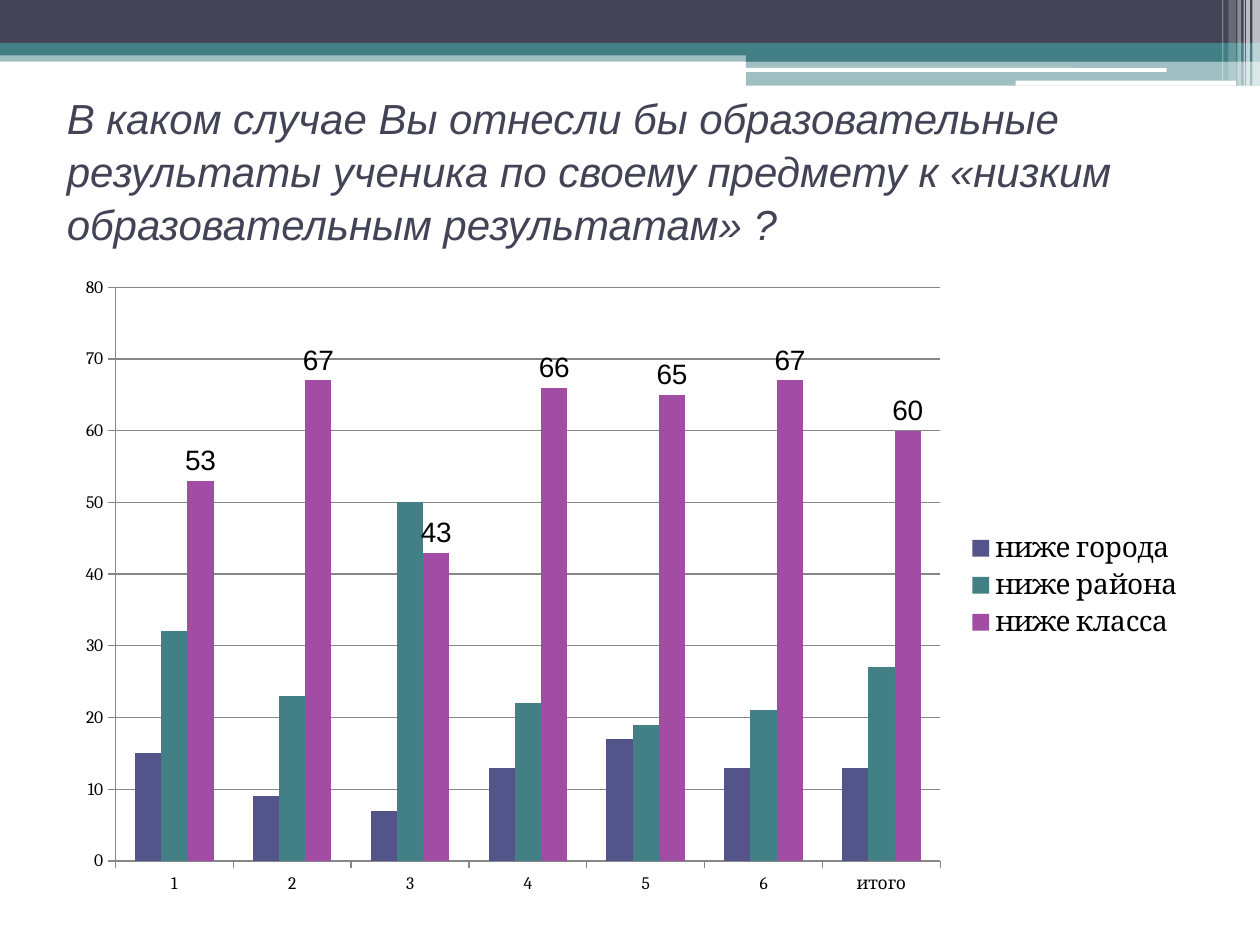
from dataclasses import dataclass

from lxml import etree
from pptx import Presentation
from pptx.chart.data import CategoryChartData
from pptx.dml.color import RGBColor
from pptx.enum.chart import XL_CHART_TYPE, XL_LABEL_POSITION, XL_LEGEND_POSITION, XL_TICK_MARK
from pptx.enum.shapes import MSO_SHAPE
from pptx.enum.text import MSO_ANCHOR, MSO_AUTO_SIZE, PP_ALIGN
from pptx.oxml.ns import qn
from pptx.util import Inches, Pt

RECT = MSO_SHAPE.RECTANGLE
ROUND = MSO_SHAPE.ROUNDED_RECTANGLE
COLUMN = XL_CHART_TYPE.COLUMN_CLUSTERED
RIGHT = XL_LEGEND_POSITION.RIGHT
ABOVE = XL_LABEL_POSITION.OUTSIDE_END
OUT = XL_TICK_MARK.OUTSIDE


@dataclass(frozen=True)
class Theme:
    dark: str = "424456"
    teal: str = "438086"
    white: str = "FFFFFF"
    black: str = "000000"
    grid: str = "878787"
    bars: tuple = ("53548A", "438086", "A04DA3")
    sans: str = "Arial"
    serif: str = "Cambria"
    head: int = 24
    label: int = 16
    axis: int = 10


THEME = Theme()

TITLE = ("В каком случае Вы отнесли бы образовательные результаты ученика "
         "по своему предмету к «низким образовательным результатам» ?")
CATS = ("1", "2", "3", "4", "5", "6", "итого")
SERIES = (
    ("ниже города", (15, 9, 7, 13, 17, 13, 13)),
    ("ниже района", (32, 23, 50, 22, 19, 21, 27)),
    ("ниже класса", (53, 67, 43, 66, 65, 67, 60)),
)
# left, top, width, height, colour, opacity in percent
BANDS = (
    (0, 0.4, 10, 0.09, THEME.teal, 50),
    (0, 0, 10, 0.34, THEME.dark, 100),
    (0, 0.34, 10, 0.1, THEME.teal, 100),
    (5.92, 0.39, 4.08, 0.1, THEME.teal, 100),
    (5.92, 0.48, 4.08, 0.2, THEME.teal, 50),
)
LINES = ((5.91, 0.54, 3.35, 0.03), (8.06, 0.64, 1.75, 0.04))
# left, width, height, opacity in percent
STRIPES = (
    (9.94, 0.06, 0.68, 65),
    (9.89, 0.03, 0.68, 65),
    (9.87, 0.01, 0.68, 60),
    (9.82, 0.03, 0.68, 40),
    (9.75, 0.06, 0.64, 20),
    (9.7, 0.01, 0.64, 30),
)


def rgb(tone):
    return RGBColor.from_string(tone)


def set_font(font, face, size, tone):
    font.name = face
    font.size = Pt(size)
    font.color.rgb = rgb(tone)


def add_bar(slide, box, tone, alpha=100, kind=RECT):
    bar = slide.shapes.add_shape(kind, *map(Inches, box))
    bar.shadow.inherit = False
    bar.line.fill.background()
    bar.fill.solid()
    bar.fill.fore_color.rgb = rgb(tone)
    if alpha < 100:
        color = bar.fill._xPr.find(f".//{qn('a:srgbClr')}")
        etree.SubElement(color, qn("a:alpha")).set("val", str(alpha * 1000))


def add_banner(slide):
    for *box, tone, alpha in BANDS:
        add_bar(slide, box, tone, alpha)
    for box in LINES:
        add_bar(slide, box, THEME.white, kind=ROUND)
    for left, width, height, alpha in STRIPES:
        add_bar(slide, (left, 0, width, height), THEME.white, alpha)


def fill_title(slide):
    title = slide.shapes.title
    title.left, title.top, title.width, title.height = map(Inches, (0.43, 0.76, 9, 1.17))
    frame = title.text_frame
    frame.text = TITLE
    frame.word_wrap = True
    frame.auto_size = MSO_AUTO_SIZE.NONE
    frame.vertical_anchor = MSO_ANCHOR.MIDDLE
    para = frame.paragraphs[0]
    para.alignment = PP_ALIGN.LEFT
    para.line_spacing = 1.05
    para.font.italic = True
    set_font(para.font, THEME.sans, THEME.head, THEME.dark)


def style_axis(axis):
    axis.major_tick_mark = OUT
    axis.format.line.color.rgb = rgb(THEME.grid)


def add_labels(plot_series):
    labels = plot_series.data_labels
    labels.show_value = True
    labels.position = ABOVE
    set_font(labels.font, THEME.sans, THEME.label, THEME.black)


def add_columns(slide):
    data = CategoryChartData()
    data.categories = CATS
    for name, vals in SERIES:
        data.add_series(name, vals)
    box = map(Inches, (0.5, 2.1, 9, 5.09))
    chart = slide.shapes.add_chart(COLUMN, *box, data).chart
    chart.has_title = False
    set_font(chart.font, THEME.serif, THEME.axis, THEME.black)

    style_axis(chart.category_axis)
    scale = chart.value_axis
    style_axis(scale)
    scale.minimum_scale, scale.maximum_scale, scale.major_unit = 0, 80, 10
    scale.major_gridlines.format.line.color.rgb = rgb(THEME.grid)

    plot = chart.plots[0]
    plot.gap_width, plot.overlap = 150, 0
    plot.vary_by_categories = False
    for item, tone in zip(plot.series, THEME.bars):
        item.format.fill.solid()
        item.format.fill.fore_color.rgb = rgb(tone)
    add_labels(plot.series[-1])

    chart.has_legend = True
    chart.legend.position = RIGHT
    chart.legend.include_in_layout = False
    set_font(chart.legend.font, THEME.serif, THEME.label, THEME.black)


def main():
    deck = Presentation()
    deck.slide_width, deck.slide_height = Inches(10), Inches(7.5)
    slide = deck.slides.add_slide(deck.slide_layouts[5])
    add_banner(slide)
    fill_title(slide)
    add_columns(slide)
    deck.save("out.pptx")


if __name__ == "__main__":
    main()
